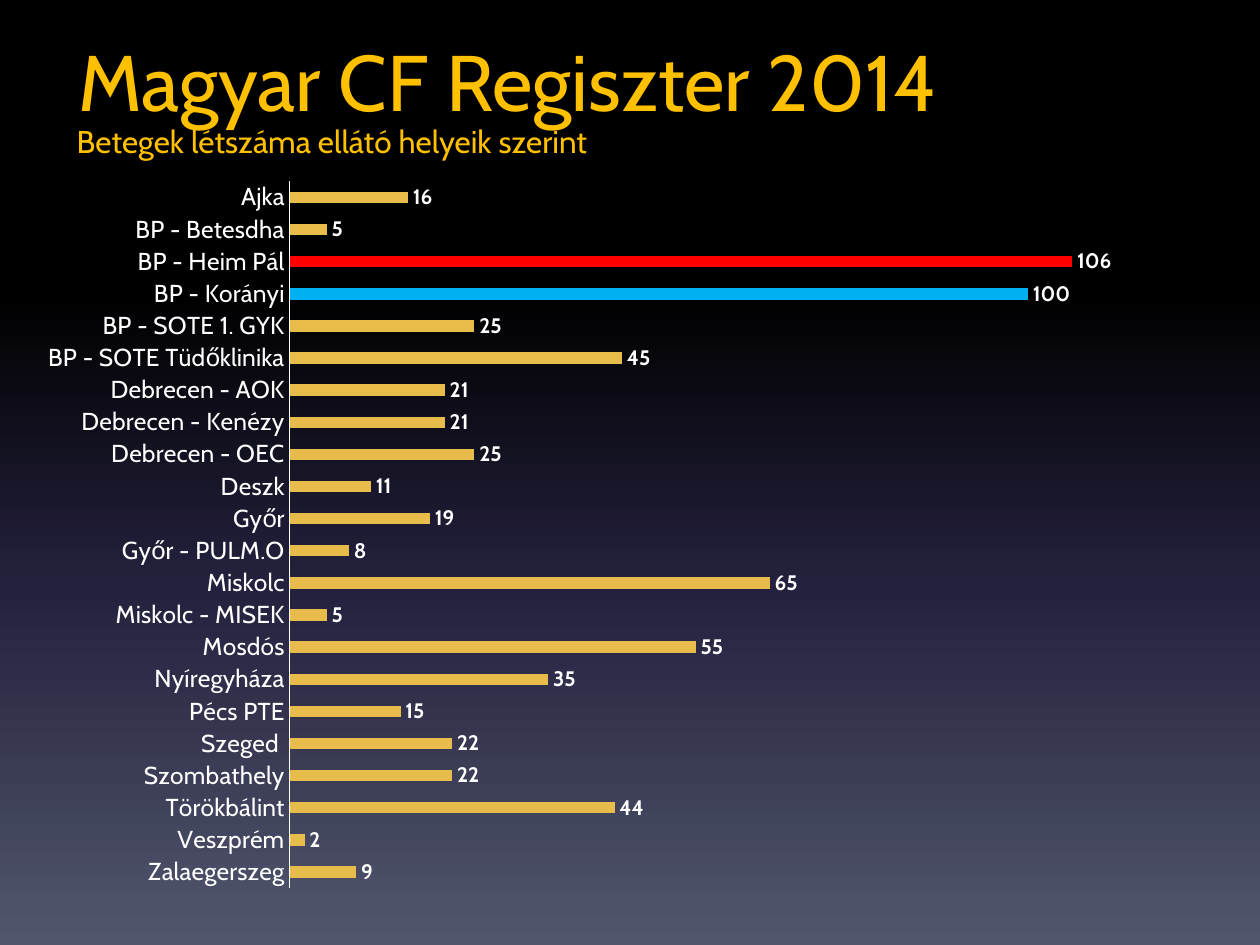
from lxml.etree import SubElement
from pptx import Presentation
from pptx.chart.data import CategoryChartData
from pptx.dml.color import RGBColor
from pptx.enum.chart import XL_CHART_TYPE as ChartType
from pptx.enum.chart import XL_LABEL_POSITION as LabelPosition
from pptx.enum.chart import XL_TICK_MARK as TickMark
from pptx.enum.text import MSO_ANCHOR as Anchor
from pptx.enum.text import PP_ALIGN as Align
from pptx.oxml.ns import qn
from pptx.util import Inches, Pt

FONT = "Cabin"
GOLD = RGBColor(0xFF, 0xC0, 0x00)
WHITE = RGBColor(0xFF, 0xFF, 0xFF)
BAR = RGBColor(0xE8, 0xBC, 0x4A)
RED = RGBColor(0xFF, 0x00, 0x00)
BLUE = RGBColor(0x00, 0xB0, 0xF0)
BLACK = RGBColor(0x00, 0x00, 0x00)
NAVY = RGBColor(0x24, 0x21, 0x3E)
SLATE = RGBColor(0x51, 0x56, 0x6D)

BACKGROUND_STOPS = [(0, BLACK), (31, BLACK), (62, NAVY), (100, SLATE)]
HIGHLIGHTS = {"BP - Heim Pál": RED, "BP - Korányi": BLUE}
PATIENTS = {
    "Ajka": 16,
    "BP - Betesdha": 5,
    "BP - Heim Pál": 106,
    "BP - Korányi": 100,
    "BP - SOTE 1. GYK": 25,
    "BP - SOTE Tüdőklinika": 45,
    "Debrecen - AOK": 21,
    "Debrecen - Kenézy": 21,
    "Debrecen - OEC": 25,
    "Deszk": 11,
    "Győr": 19,
    "Győr - PULM.O": 8,
    "Miskolc": 65,
    "Miskolc - MISEK": 5,
    "Mosdós": 55,
    "Nyíregyháza": 35,
    "Pécs PTE": 15,
    "Szeged ": 22,
    "Szombathely": 22,
    "Törökbálint": 44,
    "Veszprém": 2,
    "Zalaegerszeg": 9,
}


def style_font(font, size, color, bold=False):
    """Apply the deck font with a size, colour and weight."""
    font.name = FONT
    font.size = Pt(size)
    font.bold = bold
    font.color.rgb = color


def paint_background(page):
    """Fill the page with a vertical gradient."""
    fill = page.background.fill
    fill.gradient()
    fill.gradient_angle = 270
    stops = page.element.find(".//" + qn("a:gsLst"))
    stops.clear()
    for percent, color in BACKGROUND_STOPS:
        stop = SubElement(stops, qn("a:gs"), pos=str(percent * 1000))
        SubElement(stop, qn("a:srgbClr"), val=str(color))


def write_heading(shape, box, text, size):
    """Place one line of gold heading text in a box."""
    shape.left, shape.top, shape.width, shape.height = box
    frame = shape.text_frame
    frame.text = text
    para = frame.paragraphs[0]
    para.alignment = Align.LEFT
    style_font(para.runs[0].font, size, GOLD)
    return frame


def set_plot_area(chart, box, plot_box):
    """Fix the inner plot area of a chart, given in slide lengths."""
    left, top, width, height = box
    plot_left, plot_top, plot_width, plot_height = plot_box
    area = chart.element.find(".//" + qn("c:plotArea"))
    layout = area.find(qn("c:layout"))
    if layout is None:
        layout = SubElement(area, qn("c:layout"))
        area.insert(0, layout)
    manual = SubElement(layout, qn("c:manualLayout"))
    settings = {
        "layoutTarget": "inner",
        "xMode": "edge",
        "yMode": "edge",
        "x": (plot_left - left) / width,
        "y": (plot_top - top) / height,
        "w": plot_width / width,
        "h": plot_height / height,
    }
    for name, value in settings.items():
        SubElement(manual, qn("c:" + name), val=str(value))


def add_patient_chart(page, box, plot_box):
    """Add the bar chart of patients by care centre."""
    centres = list(reversed(PATIENTS))
    data = CategoryChartData()
    data.categories = centres
    data.add_series("Series 1", [PATIENTS[centre] for centre in centres])
    chart = page.shapes.add_chart(ChartType.BAR_CLUSTERED, *box, data).chart
    chart.has_legend = False
    chart.has_title = False
    style_font(chart.font, 10, WHITE)
    set_plot_area(chart, box, plot_box)

    value_axis = chart.value_axis
    value_axis.visible = False
    value_axis.has_major_gridlines = False
    value_axis.minimum_scale, value_axis.maximum_scale = 0, 120
    category_axis = chart.category_axis
    category_axis.major_tick_mark = TickMark.NONE
    category_axis.minor_tick_mark = TickMark.NONE
    category_axis.format.line.color.rgb = WHITE
    category_axis.format.line.width = Pt(0.75)
    style_font(category_axis.tick_labels.font, 14, WHITE)

    plot = chart.plots[0]
    plot.gap_width = 182
    plot.vary_by_categories = False
    series = plot.series[0]
    series.format.fill.solid()
    series.format.fill.fore_color.rgb = BAR
    for centre, color in HIGHLIGHTS.items():
        fill = series.points[centres.index(centre)].format.fill
        fill.solid()
        fill.fore_color.rgb = color
    labels = series.data_labels
    labels.show_value = True
    labels.position = LabelPosition.OUTSIDE_END
    style_font(labels.font, 12, WHITE, bold=True)


def build_register_slide(deck):
    """Build the slide with heading, subtitle and chart."""
    page = deck.slides.add_slide(deck.slide_layouts[5])
    paint_background(page)
    subtitle_box = Inches(0.51), Inches(0.92), Inches(4.55), Inches(0.4)
    subtitle = page.shapes.add_textbox(*subtitle_box)
    frame = write_heading(subtitle, subtitle_box, "Betegek létszáma ellátó helyeik szerint", 18)
    frame.word_wrap = False
    title_box = Inches(0.52), Inches(0.19), Inches(9), Inches(0.89)
    frame = write_heading(page.shapes.title, title_box, "Magyar CF Regiszter 2014", 45)
    frame.vertical_anchor = Anchor.MIDDLE
    add_patient_chart(
        page,
        (Inches(0.2), Inches(1.32), Inches(9.32), Inches(5.85)),
        (Inches(2.3), Inches(1.44), Inches(7.03), Inches(5.61)),
    )


def main():
    """Create and save the deck."""
    deck = Presentation()
    deck.slide_width, deck.slide_height = Inches(10), Inches(7.5)
    build_register_slide(deck)
    deck.save("out.pptx")


if __name__ == "__main__":
    main()
